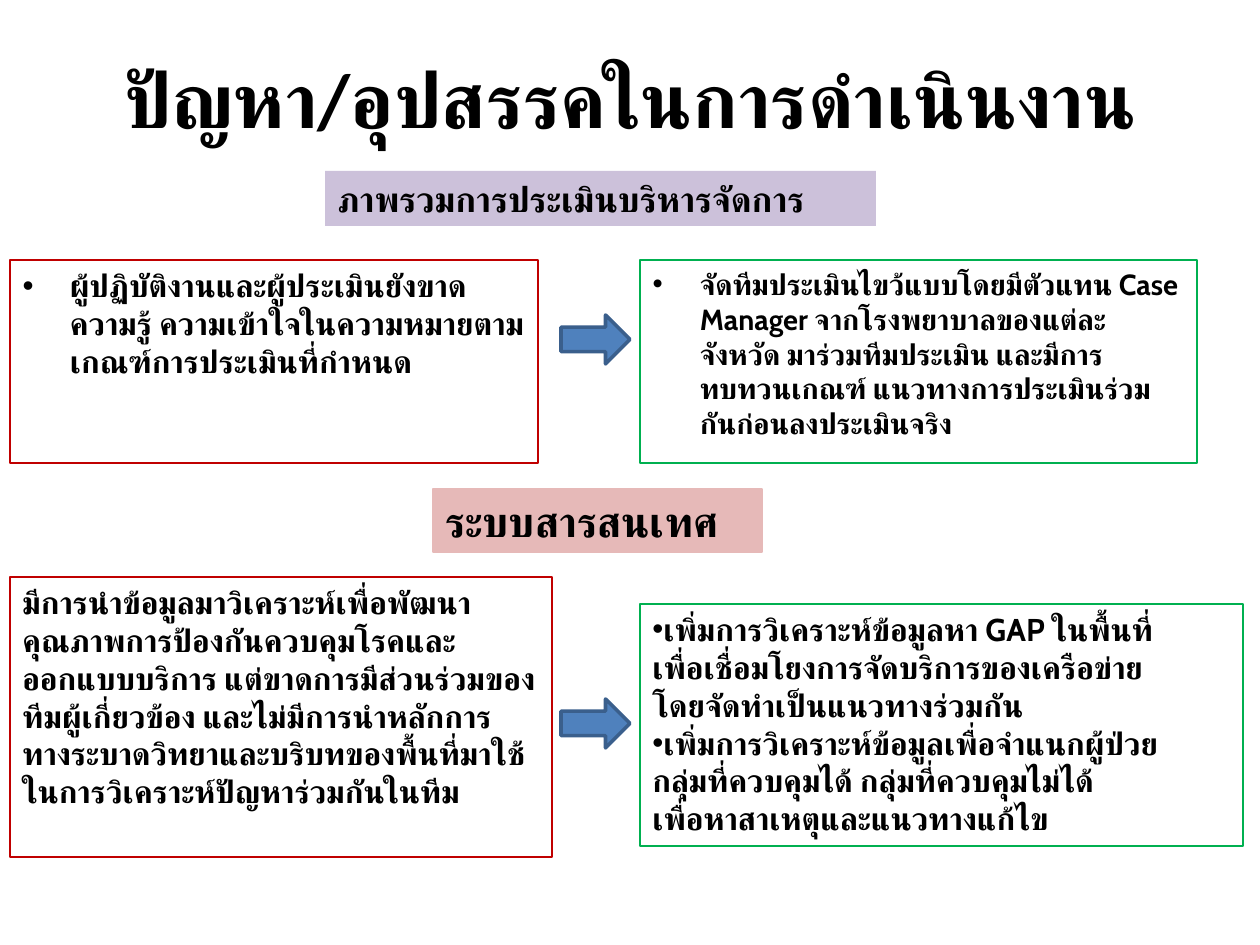
from dataclasses import dataclass
from typing import Optional

from lxml import etree
from pptx import Presentation
from pptx import util as u
from pptx.dml.color import RGBColor
from pptx.enum import shapes, text
from pptx.oxml.ns import qn

EMU_PER_PX = 914400 / 126
COLORS = {
    "text": "000000",
    "problem": "C00000",
    "solution": "00B050",
    "arrow": "4F81BD",
    "arrow_edge": "3A5F8C",
    "overview": "CCC1DA",
    "information": "E6B9B8",
}


@dataclass
class Area:
    left: int
    top: int
    width: int
    height: int


@dataclass
class Box:
    area: Area
    lines: list[str]
    size: float = 18
    fill: Optional[str] = None
    line: Optional[str] = None
    bullets: tuple[int, ...] = ()  # line numbers that start with a bullet


def px(value: int) -> int:
    return round(value * EMU_PER_PX)


def color(name: str) -> RGBColor:
    return RGBColor.from_string(COLORS[name])


def place(shape, area: Area) -> None:
    shape.left, shape.top = px(area.left), px(area.top)
    shape.width, shape.height = px(area.width), px(area.height)


def paint(shape, fill: Optional[str] = None, line: Optional[str] = None,
          width: float = 0.75) -> None:
    if fill:
        shape.fill.solid()
        shape.fill.fore_color.rgb = color(fill)
    else:
        shape.fill.background()
    if line:
        shape.line.color.rgb = color(line)
        shape.line.width = u.Pt(width)
    else:
        shape.line.fill.background()


def write(paragraph, content: str, *, size: float, font: str = "Cabin") -> None:
    run = paragraph.add_run()
    run.text = content
    run.font.name = font
    run.font.size = u.Pt(size)
    run.font.bold = True
    run.font.color.rgb = color("text")
    # Thai letters take the complex-script font
    complex_font = etree.SubElement(run.font._element, qn("a:cs"))
    complex_font.set("typeface", font)


def add_bullet(paragraph) -> None:
    properties = paragraph._p.get_or_add_pPr()
    etree.SubElement(properties, qn("a:buFont")).set("typeface", "Arial")
    etree.SubElement(properties, qn("a:buChar")).set("char", "•")


def fill_placeholder(shape, area: Area, content: str, *, size: float,
                     font: str = "Cabin") -> None:
    place(shape, area)
    shape.text_frame.auto_size = text.MSO_AUTO_SIZE.NONE
    write(shape.text_frame.paragraphs[0], content, size=size, font=font)


def draw_box(slide, box: Box) -> None:
    shape = slide.shapes.add_textbox(0, 0, 0, 0)
    place(shape, box.area)
    paint(shape, box.fill, box.line)
    frame = shape.text_frame
    frame.word_wrap = True
    for number, content in enumerate(box.lines):
        paragraph = frame.add_paragraph() if number else frame.paragraphs[0]
        if number in box.bullets:
            add_bullet(paragraph)
        write(paragraph, content, size=box.size)


def draw_arrow(slide, area: Area) -> None:
    shape = slide.shapes.add_shape(shapes.MSO_SHAPE.RIGHT_ARROW, 0, 0, 0, 0)
    place(shape, area)
    shape.shadow.inherit = False
    paint(shape, "arrow", "arrow_edge", width=2)


BOXES = [
    Box(Area(640, 604, 603, 242), [
        "เพิ่มการวิเคราะห์ข้อมูลหา GAP ในพื้นที่",
        "เพื่อเชื่อมโยงการจัดบริการของเครือข่าย",
        "โดยจัดทำเป็นแนวทางร่วมกัน",
        "เพิ่มการวิเคราะห์ข้อมูลเพื่อจำแนกผู้ป่วย",
        "กลุ่มที่ควบคุมได้ กลุ่มที่ควบคุมไม่ได้",
        "เพื่อหาสาเหตุและแนวทางแก้ไข",
    ], line="solution", bullets=(0, 3)),
    Box(Area(10, 577, 542, 280), [
        "มีการนำข้อมูลมาวิเคราะห์เพื่อพัฒนาคุณภาพการป้องกันควบคุมโรคและ"
        "ออกแบบบริการ แต่ขาดการมีส่วนร่วมของทีมผู้เกี่ยวข้อง และไม่มีการนำหลักการ"
        "ทางระบาดวิทยาและบริบทของพื้นที่มาใช้ในการวิเคราะห์ปัญหาร่วมกันในทีม",
    ], line="problem"),
    Box(Area(433, 489, 329, 63), ["ระบบสารสนเทศ"], size=24,
        fill="information", line="information"),
    Box(Area(325, 171, 551, 55), ["ภาพรวมการประเมินบริหารจัดการ"], size=20,
        fill="overview"),
]


def main() -> None:
    presentation = Presentation()
    presentation.slide_width, presentation.slide_height = px(1260), px(945)
    slide = presentation.slides.add_slide(presentation.slide_layouts[3])

    # Title
    fill_placeholder(slide.shapes.title, Area(63, 38, 1134, 120),
                     "ปัญหา/อุปสรรคในการดำเนินงาน", size=44, font="Calibri")

    # Overview: problem and solution
    problem, solution = slide.placeholders[1], slide.placeholders[2]
    fill_placeholder(
        problem, Area(10, 260, 528, 203),
        "ผู้ปฏิบัติงานและผู้ประเมินยังขาดความรู้ ความเข้าใจในความหมาย"
        "ตามเกณฑ์การประเมินที่กำหนด", size=18)
    paint(problem, line="problem")
    fill_placeholder(
        solution, Area(640, 260, 557, 203),
        "จัดทีมประเมินไขว้แบบโดยมีตัวแทน Case Manager จากโรงพยาบาลของแต่ละ"
        "จังหวัด มาร่วมทีมประเมิน และมีการทบทวนเกณฑ์ แนวทางการประเมินร่วม"
        "กันก่อนลงประเมินจริง", size=16.6)
    paint(solution, line="solution")

    # Information system boxes and section headings
    for box in BOXES:
        draw_box(slide, box)

    # Arrows from problem to solution
    for top in (315, 699):
        draw_arrow(slide, Area(561, top, 69, 49))

    presentation.save("out.pptx")


if __name__ == "__main__":
    main()
